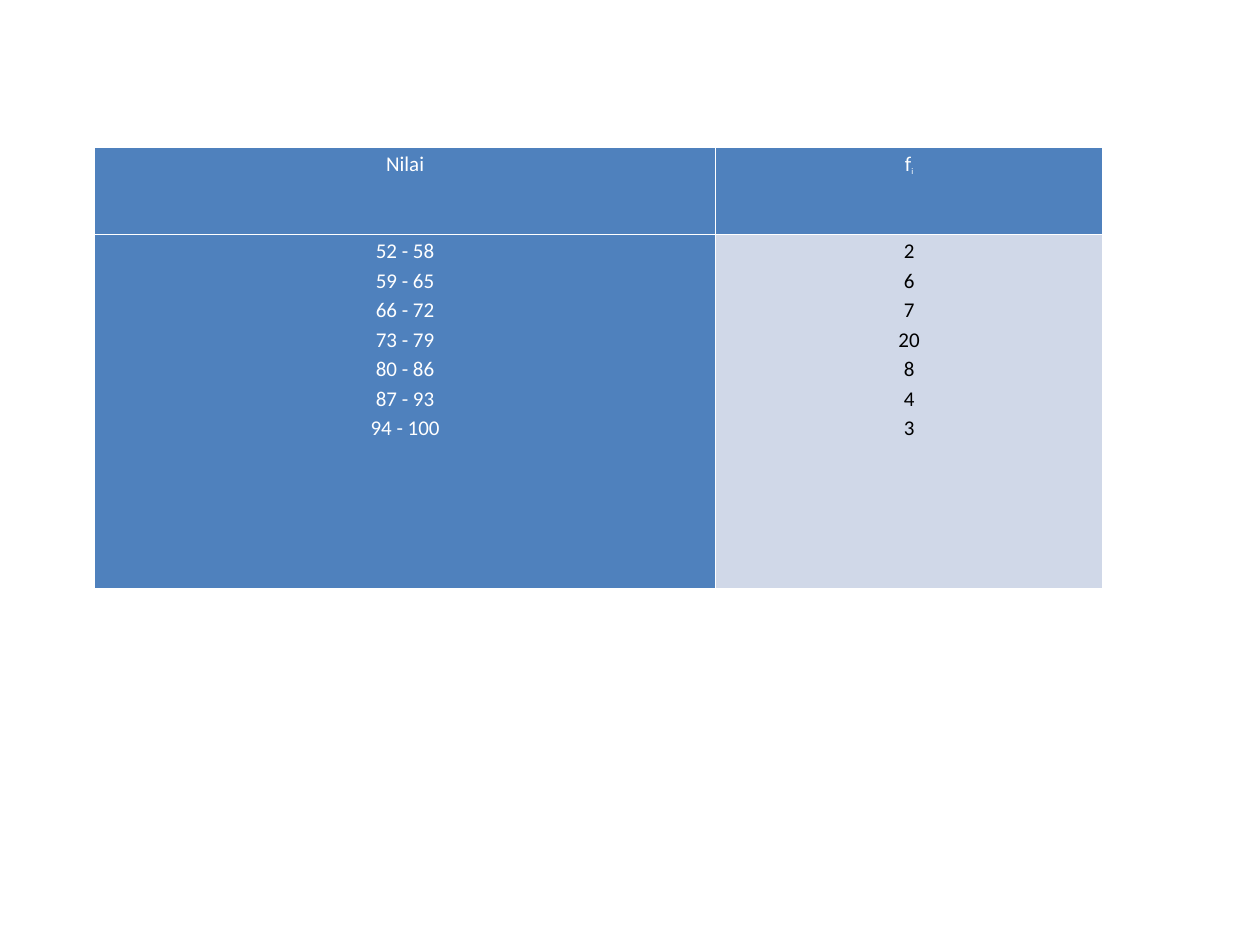
from lxml import etree
from pptx import Presentation
from pptx.dml.color import RGBColor
from pptx.enum.text import PP_ALIGN
from pptx.oxml.ns import qn
from pptx.util import Pt

CENTER = PP_ALIGN.CENTER
BLUE, PALE, WHITE, BLACK = "4F81BD", "D0D8E8", "FFFFFF", "000000"
COL_WIDTHS = (355, 221)
ROW_HEIGHTS = (49.7, 202.3)
SCORES = (
    ("52 - 58", "2"),
    ("59 - 65", "6"),
    ("66 - 72", "7"),
    ("73 - 79", "20"),
    ("80 - 86", "8"),
    ("87 - 93", "4"),
    ("94 - 100", "3"),
)


def rgb(value):
    return RGBColor.from_string(value)


def format_run(r, color, size=12):
    r.font.name = "Calibri"
    r.font.size = Pt(size)
    r.font.color.rgb = rgb(color)


def add_subscript(p, text, color):
    r = p.add_run()
    r.text = text
    format_run(r, color, 8.5)
    r.font._element.set("baseline", "-25000")


def set_borders(cell, color, width):
    tc_pr = cell._tc.get_or_add_tcPr()
    for side in ("lnL", "lnR", "lnT", "lnB"):
        ln = etree.SubElement(tc_pr, qn(f"a:{side}"), w=str(Pt(width)))
        fill = etree.SubElement(ln, qn("a:solidFill"))
        etree.SubElement(fill, qn("a:srgbClr"), val=color)


def fill_cell(cell, lines, background, color):
    cell.margin_left = cell.margin_right = Pt(5)
    cell.margin_top = cell.margin_bottom = Pt(0)
    set_borders(cell, WHITE, 1)
    cell.fill.solid()
    cell.fill.fore_color.rgb = rgb(background)
    cell.text_frame.text = "\n".join(lines)
    for p in cell.text_frame.paragraphs:
        p.alignment = CENTER
        p.line_spacing = Pt(16.9)
        for r in p.runs:
            format_run(r, color)


def add_score_table(slide):
    table = slide.shapes.add_table(
        2, 2, Pt(54), Pt(84.4), Pt(sum(COL_WIDTHS)), Pt(sum(ROW_HEIGHTS))
    ).table
    for column, width in zip(table.columns, COL_WIDTHS):
        column.width = Pt(width)
    for row, height in zip(table.rows, ROW_HEIGHTS):
        row.height = Pt(height)
    ranges, frequencies = zip(*SCORES)
    fill_cell(table.cell(0, 0), ["Nilai"], BLUE, WHITE)
    fill_cell(table.cell(0, 1), ["f"], BLUE, WHITE)
    add_subscript(table.cell(0, 1).text_frame.paragraphs[0], "i", WHITE)
    fill_cell(table.cell(1, 0), ranges, BLUE, WHITE)
    fill_cell(table.cell(1, 1), frequencies, PALE, BLACK)


def main():
    prs = Presentation()
    prs.slide_width, prs.slide_height = Pt(720), Pt(540)
    slide = prs.slides.add_slide(prs.slide_layouts[6])
    add_score_table(slide)
    prs.save("out.pptx")


if __name__ == "__main__":
    main()
